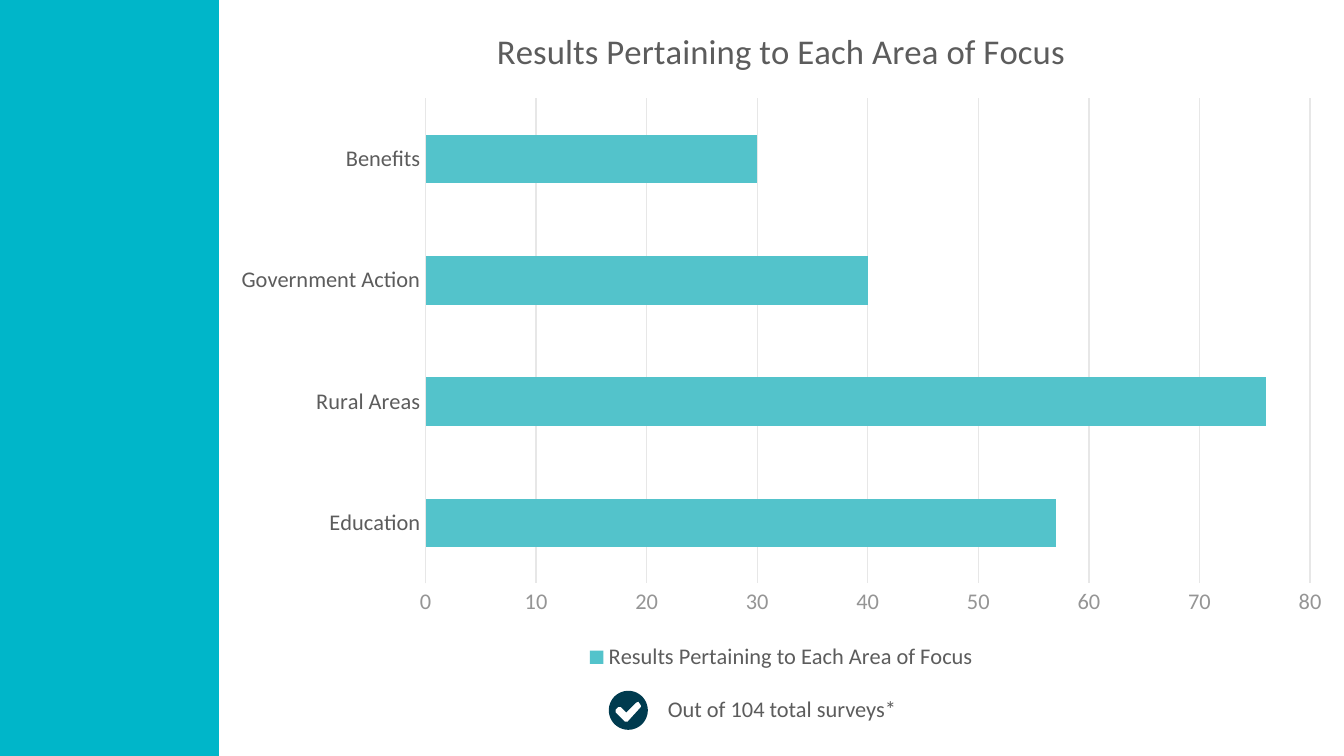
from math import cos, pi, sin

from pptx import Presentation
from pptx.chart.data import CategoryChartData
from pptx.dml.color import RGBColor
from pptx.enum.chart import XL_CHART_TYPE as ChartType
from pptx.enum.chart import XL_LEGEND_POSITION as LegendPosition
from pptx.enum.chart import XL_TICK_MARK as TickMark
from pptx.enum.shapes import MSO_SHAPE as Shape
from pptx.enum.text import MSO_ANCHOR as Anchor
from pptx.enum.text import PP_ALIGN as Align
from pptx.util import Inches, Pt

PAGE_WIDTH = 10
PAGE_HEIGHT = PAGE_WIDTH * 9 / 16
CYAN = RGBColor(0x00, 0xB6, 0xC9)
TEAL = RGBColor(0x53, 0xC3, 0xCB)
NAVY = RGBColor(0x00, 0x3B, 0x4F)
GREY = RGBColor(0x5C, 0x5C, 0x5C)
MID_GREY = RGBColor(0x95, 0x95, 0x95)
PALE_GREY = RGBColor(0xE7, 0xE7, 0xE7)
FONT = "Calibri"
HEADING = "Results Pertaining to Each Area of Focus"
RESULTS = {"Education": 57, "Rural Areas": 76, "Government Action": 40, "Benefits": 30}
CHECK = [(0.24, 0.11), (0.22, 0.08), (0.2, 0.09), (0.13, 0.16), (0.09, 0.12), (0.07, 0.12),
         (0.05, 0.14), (0.05, 0.16), (0.12, 0.23), (0.14, 0.23), (0.24, 0.12)]


def format_font(font, size=12, color=GREY):
    """Apply the slide's typeface with a size and colour."""
    font.name, font.size, font.bold = FONT, Pt(size), False
    font.color.rgb = color


def write_text(frame, text, align=Align.CENTER, **font_format):
    """Write one formatted paragraph into a text frame."""
    para = frame.paragraphs[0]
    para.alignment = align
    span = para.add_run()
    span.text = text
    format_font(span.font, **font_format)


def paint(shape, color):
    """Give a shape a flat fill with no line or shadow."""
    shape.fill.solid()
    shape.fill.fore_color.rgb = color
    shape.line.fill.background()
    shape.shadow.inherit = False


def style_line(line, color=PALE_GREY):
    """Draw a chart line thin and pale."""
    line.color.rgb = color
    line.width = Pt(0.75)


def add_side_band(page, left, top, width, height):
    """Fill a box with the accent colour."""
    paint(page.shapes.add_shape(Shape.RECTANGLE, *map(Inches, (left, top, width, height))), CYAN)


def add_results_chart(page, left, top, width, height):
    """Place the bar chart of survey results in a box."""
    data = CategoryChartData()
    data.categories = RESULTS.keys()
    data.add_series(HEADING, RESULTS.values())
    box = map(Inches, (left, top, width, height))
    chart = page.shapes.add_chart(ChartType.BAR_STACKED, *box, data).chart
    format_font(chart.font, size=10)
    write_text(chart.chart_title.text_frame, HEADING, size=18.6)
    chart.chart_title.include_in_layout = False

    chart.has_legend = True
    chart.legend.position = LegendPosition.BOTTOM
    chart.legend.include_in_layout = False
    format_font(chart.legend.font)

    for axis, color in ((chart.category_axis, GREY), (chart.value_axis, MID_GREY)):
        axis.major_tick_mark = axis.minor_tick_mark = TickMark.NONE
        format_font(axis.tick_labels.font, color=color)
    chart.category_axis.has_major_gridlines = False
    style_line(chart.category_axis.format.line)
    chart.value_axis.format.line.fill.background()
    style_line(chart.value_axis.major_gridlines.format.line)

    plot = chart.plots[0]
    plot.gap_width, plot.overlap, plot.vary_by_categories = 150, 100, False
    bars = plot.series[0].format
    bars.fill.solid()
    bars.fill.fore_color.rgb = TEAL
    bars.line.fill.background()


def add_check_badge(page, left, top, size):
    """Draw a disc with a tick cut out of it."""
    radius, steps = size / 2, 72
    angles = [2 * pi * step / steps for step in range(steps)]
    disc = [(radius + radius * cos(angle), radius + radius * sin(angle)) for angle in angles]
    rings = [[(Inches(left + x), Inches(top + y)) for x, y in ring] for ring in (disc, CHECK)]
    builder = page.shapes.build_freeform(*rings[0][0], scale=1.0)
    builder.add_line_segments(rings[0][1:], close=True)
    builder.move_to(*rings[1][0])
    builder.add_line_segments(rings[1][1:], close=True)
    paint(builder.convert_to_shape(), NAVY)


def add_survey_note(page, left, top, width, height):
    """Place the survey count in a box."""
    frame = page.shapes.add_textbox(*map(Inches, (left, top, width, height))).text_frame
    frame.word_wrap = True
    frame.vertical_anchor = Anchor.TOP
    write_text(frame, "Out of 104 total surveys*")


def main():
    """Build and save the slide."""
    deck = Presentation()
    deck.slide_width, deck.slide_height = Inches(PAGE_WIDTH), Inches(PAGE_HEIGHT)
    page = deck.slides.add_slide(deck.slide_layouts[6])
    band_width = 1.63
    add_side_band(page, 0, 0, band_width, PAGE_HEIGHT)
    add_check_badge(page, 4.53, 5.14, 0.29)
    add_results_chart(page, band_width, 0, PAGE_WIDTH - band_width, 5.03)
    add_survey_note(page, 3.82, 5.12, 4, 0.3)
    deck.save("out.pptx")


if __name__ == "__main__":
    main()
